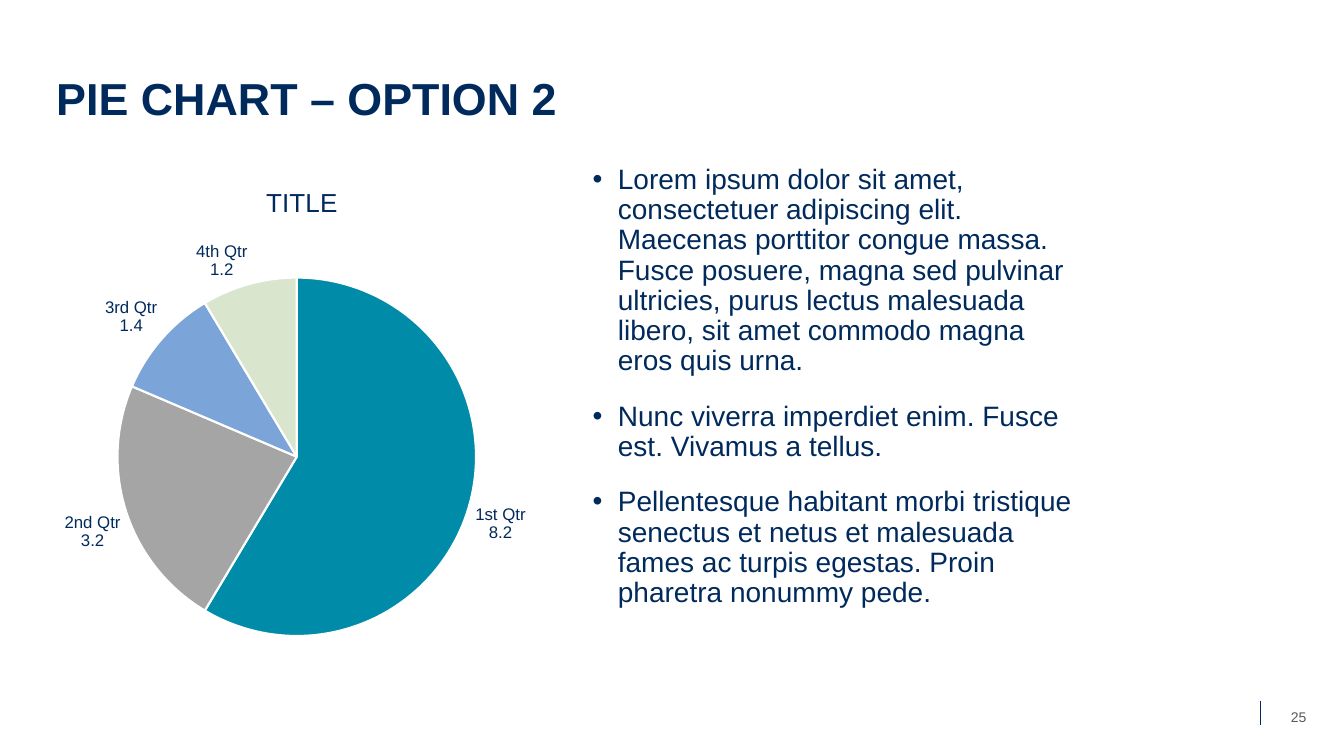
from lxml import etree
from pptx import Presentation
from pptx.chart.data import CategoryChartData
from pptx.dml.color import RGBColor
from pptx.enum.chart import XL_CHART_TYPE, XL_LABEL_POSITION
from pptx.enum.shapes import MSO_CONNECTOR
from pptx.enum.text import MSO_ANCHOR, PP_ALIGN
from pptx.oxml.ns import qn
from pptx.util import Emu, Pt

PIE = XL_CHART_TYPE.PIE
OUTSIDE = XL_LABEL_POSITION.OUTSIDE_END
STRAIGHT = MSO_CONNECTOR.STRAIGHT
TOP, MIDDLE, BOTTOM = MSO_ANCHOR.TOP, MSO_ANCHOR.MIDDLE, MSO_ANCHOR.BOTTOM
LEFT, CENTER = PP_ALIGN.LEFT, PP_ALIGN.CENTER

SCALE = 9144
FONT = "Arial"
COLORS = {
    "navy": "002A5C",
    "teal": "008BA9",
    "gray": "A5A5A5",
    "blue": "7BA4D9",
    "green": "DAE5CD",
    "white": "FFFFFF",
    "page": "595959",
}
SALES = {
    "1st Qtr": (8.2, "teal"),
    "2nd Qtr": (3.2, "gray"),
    "3rd Qtr": (1.4, "blue"),
    "4th Qtr": (1.2, "green"),
}
POINTS = [
    "Lorem ipsum dolor sit amet, consectetuer adipiscing elit. Maecenas "
    "porttitor congue massa. Fusce posuere, magna sed pulvinar ultricies, "
    "purus lectus malesuada libero, sit amet commodo magna eros quis urna.",
    "Nunc viverra imperdiet enim. Fusce est. Vivamus a tellus.",
    "Pellentesque habitant morbi tristique senectus et netus et malesuada "
    "fames ac turpis egestas. Proin pharetra nonummy pede.",
]


def px(value):
    return Emu(value * SCALE)


def color(name):
    return RGBColor.from_string(COLORS[name])


def place(parent, **spots):
    layout = parent.find(qn("c:layout"))
    if layout is None:
        layout = etree.Element(qn("c:layout"))
        parent.insert(0, layout)
    manual = etree.SubElement(layout, qn("c:manualLayout"))
    for key, value in spots.items():
        etree.SubElement(manual, qn(f"c:{key}"), val=str(value))


class Deck:
    def __init__(self, width, height):
        self.show = Presentation()
        self.show.slide_width = px(width)
        self.show.slide_height = px(height)
        self.slide = self.show.slides.add_slide(self.show.slide_layouts[6])

    def style(self, font, size, tint="navy", bold=False):
        values = {"name": FONT, "size": Pt(size), "bold": bold}
        for key, value in values.items():
            setattr(font, key, value)
        font.color.rgb = color(tint)

    def text(self, box, lines, size, tint="navy", bold=False, anchor=TOP,
             align=LEFT, space=1.0, bullet=False):
        frame = self.slide.shapes.add_textbox(*map(px, box)).text_frame
        frame.word_wrap = True
        frame.vertical_anchor = anchor
        for index, line in enumerate(lines):
            para = frame.paragraphs[0] if index == 0 else frame.add_paragraph()
            values = {"alignment": align, "line_spacing": space,
                      "space_before": Pt(18 if index else 0)}
            for key, value in values.items():
                setattr(para, key, value)
            if bullet:
                props = para._p.get_or_add_pPr()
                props.set("marL", str(px(25)))
                props.set("indent", str(px(-25)))
                etree.SubElement(props, qn("a:buFont"), typeface=FONT)
                etree.SubElement(props, qn("a:buChar"), char="•")
            run = para.add_run()
            run.text = line
            self.style(run.font, size, tint, bold)

    def line(self, ends, tint, width):
        rule = self.slide.shapes.add_connector(STRAIGHT, *map(px, ends))
        rule.line.color.rgb = color(tint)
        rule.line.width = Pt(width)
        etree.SubElement(rule._element.spPr, qn("a:effectLst"))

    def pie(self, box, title, sales):
        data = CategoryChartData()
        data.categories = list(sales)
        data.add_series("Series 1", [value for value, tint in sales.values()])
        frame = self.slide.shapes.add_chart(PIE, *map(px, box), data)
        chart = frame.chart
        self.style(chart.font, 10)
        chart.has_legend = False
        chart.has_title = True
        head = chart.chart_title
        run = head.text_frame.paragraphs[0].add_run()
        run.text = title
        self.style(run.font, 18.6)
        place(head._element, xMode="edge", yMode="edge", x=0.42, y=0.04)
        area = chart._chartSpace.find(".//" + qn("c:plotArea"))
        place(area, layoutTarget="inner", xMode="edge", yMode="edge",
              x=0.139, y=0.209, w=0.7, h=0.816)
        plot = chart.plots[0]
        plot.vary_by_categories = True
        series = plot.series[0]
        for index, (value, tint) in enumerate(sales.values()):
            form = series.points[index].format
            form.fill.solid()
            form.fill.fore_color.rgb = color(tint)
            form.line.color.rgb = color("white")
            form.line.width = Pt(1.5)
        labels = series.data_labels
        values = {"show_value": True, "show_category_name": True,
                  "show_percentage": False, "position": OUTSIDE}
        for key, value in values.items():
            setattr(labels, key, value)
        self.style(labels.font, 12)
        split = etree.Element(qn("c:separator"))
        split.text = "\n"
        labels._element.find(qn("c:showBubbleSize")).addnext(split)


def main():
    deck = Deck(1333, 750)
    deck.line((1250, 695, 1250, 719), "navy", 0.5)
    deck.pie((46, 159, 508, 497), "TITLE", SALES)
    deck.text((578, 159, 508, 497), POINTS, 20, space=0.9, bullet=True)
    deck.text((1264, 691, 48, 40), ["25"], 10, "page",
              anchor=MIDDLE, align=CENTER)
    deck.text((46, 33, 1040, 96), ["PIE CHART – OPTION 2"], 32, bold=True,
              anchor=BOTTOM, space=0.9)
    deck.show.save("out.pptx")


if __name__ == "__main__":
    main()
